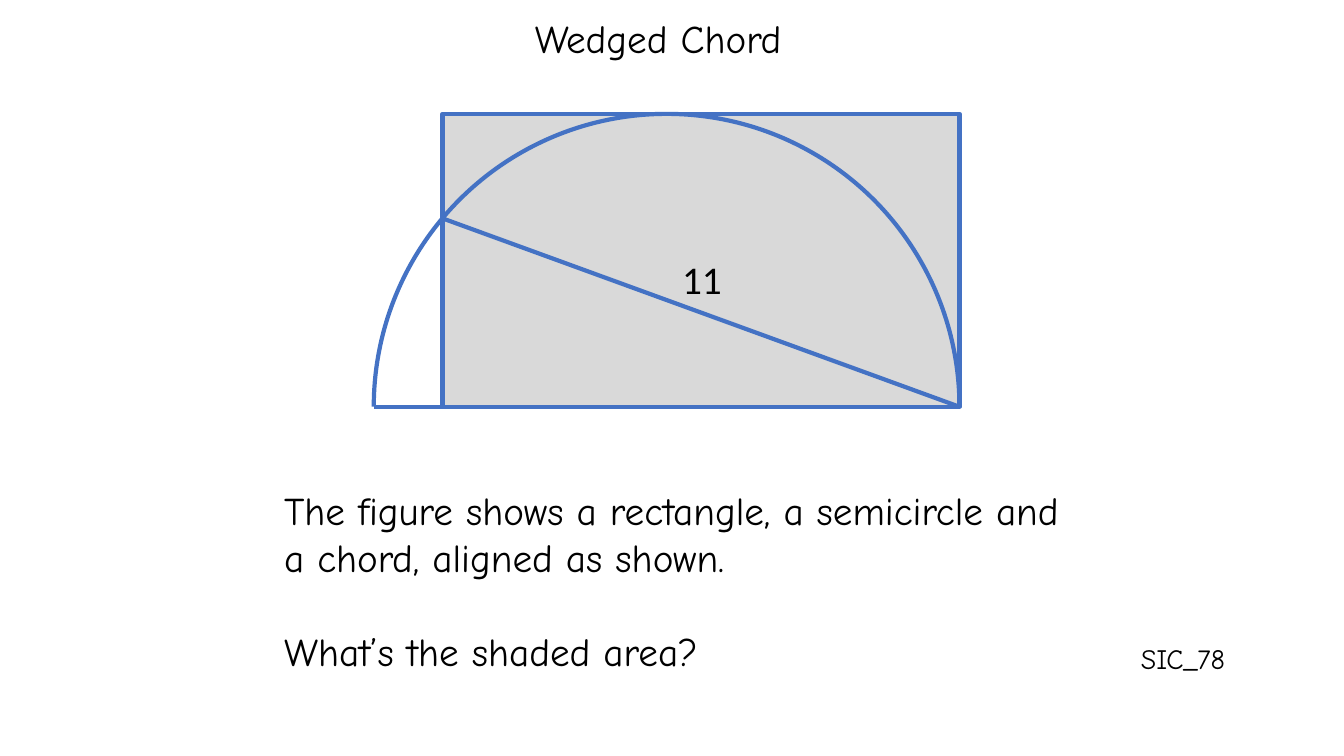
from math import sqrt

from lxml import etree
from pptx import Presentation
from pptx.dml.color import RGBColor
from pptx.enum.shapes import MSO_CONNECTOR, MSO_SHAPE
from pptx.enum.text import MSO_AUTO_SIZE
from pptx.oxml.ns import qn
from pptx.util import Cm, Pt

RECT, ARC = MSO_SHAPE.RECTANGLE, MSO_SHAPE.ARC
STRAIGHT = MSO_CONNECTOR.STRAIGHT
FIT = MSO_AUTO_SIZE.SHAPE_TO_FIT_TEXT

COLORS = {"shade": "D9D9D9", "line": "4472C4", "text": "000000"}


def rgb(name):
    return RGBColor.from_string(COLORS[name])


def style_line(sp):
    sp.line.color.rgb = rgb("line")
    sp.line.width = Pt(3)


def add_outline(shapes, kind, box, fill=None):
    sp = shapes.add_shape(kind, *map(Cm, box))
    sp.shadow.inherit = False
    if fill:
        sp.fill.solid()
        sp.fill.fore_color.rgb = rgb(fill)
    else:
        sp.fill.background()
    style_line(sp)
    return sp


def add_segment(shapes, start, end):
    sp = shapes.add_connector(STRAIGHT, *map(Cm, (*start, *end)))
    style_line(sp)
    etree.SubElement(sp._element.spPr, qn("a:effectLst"))


def add_text(shapes, box, paragraphs, size=28, font="Comic Neue", wrap=False, gap=0):
    tf = shapes.add_textbox(*map(Cm, box)).text_frame
    for name, value in {"word_wrap": wrap, "auto_size": FIT}.items():
        setattr(tf, name, value)
    for i, text in enumerate(paragraphs):
        p = tf.add_paragraph() if i else tf.paragraphs[0]
        if i:
            p.space_before = Pt(gap)
        r = p.add_run()
        r.text = text
        for name, value in {"name": font, "size": Pt(size)}.items():
            setattr(r.font, name, value)
        r.font.color.rgb = rgb("text")


def add_figure(slide, left, top, radius, rect_left):
    """Semicircle on its diameter, with a rectangle ending at its right end."""
    shapes = slide.shapes.add_group_shape().shapes
    right, base = left + 2 * radius, top + radius
    center = left + radius
    chord_y = base - sqrt(radius ** 2 - (center - rect_left) ** 2)

    # Shaded rectangle
    add_outline(shapes, RECT, (rect_left, top, right - rect_left, radius), "shade")
    # Chord
    add_segment(shapes, (right, base), (rect_left, chord_y))
    # Semicircle, from 180 to 0 degrees
    arc = add_outline(shapes, ARC, (left, top, 2 * radius, 2 * radius))
    arc.adjustments[0], arc.adjustments[1] = 108, 0
    # Diameter left of the rectangle
    add_segment(shapes, (left, base), (rect_left, base))
    # Chord length
    add_text(shapes, (center + 0.14, top + 3.45, 1.52, 1.45), ["11"], font="Calibri")


def add_puzzle_slide(prs, title, question, code):
    slide = prs.slides.add_slide(prs.slide_layouts[6])
    add_figure(slide, left=9.42, top=2.87, radius=7.38, rect_left=11.15)
    add_text(slide.shapes, (13.23, 0.23, 7.42, 1.45), [title])
    add_text(slide.shapes, (6.91, 12.12, 20.04, 5.05), question, wrap=True, gap=34)
    add_text(slide.shapes, (28.5, 16.05, 2.77, 1.12), [code], size=20)


def main():
    prs = Presentation()
    prs.slide_width, prs.slide_height = Cm(33.87), Cm(19.05)
    add_puzzle_slide(
        prs,
        "Wedged Chord",
        ["The figure shows a rectangle, a semicircle and a chord, aligned as shown.",
         "What’s the shaded area?"],
        "SIC_78",
    )
    prs.save("out.pptx")


if __name__ == "__main__":
    main()
